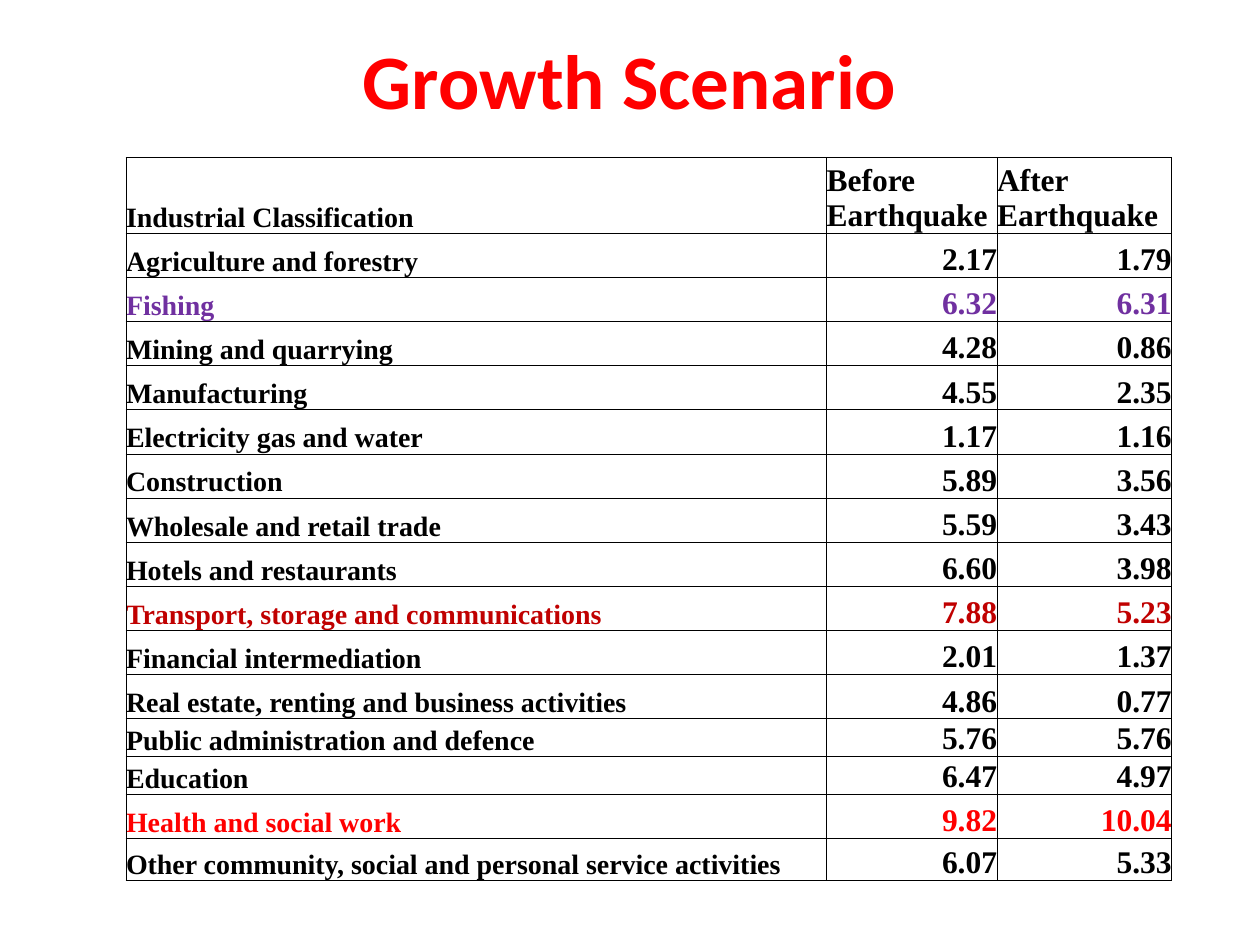
import pptx
import pptx.util
import pptx.dml.color
import pptx.enum.text
import pptx.oxml.ns
import lxml.etree

ALIGN = pptx.enum.text.PP_ALIGN
ANCHOR = pptx.enum.text.MSO_ANCHOR
WIDE, HIGH = 10, 7.5
BLACK, RED, DARK, PLUM = "000000", "FF0000", "C00000", "7030A0"
COLS = [0.67, 0.163, 0.167]
TALL, MID, LOW, LAST, HEAD = 0.35, 0.35, 0.29, 0.33, 0.58
ROWS = [
    ("Industrial Classification", "Before Earthquake", "After Earthquake"),
    ("Agriculture and forestry", "2.17", "1.79"),
    ("Fishing", "6.32", "6.31"),
    ("Mining and quarrying", "4.28", "0.86"),
    ("Manufacturing", "4.55", "2.35"),
    ("Electricity gas and water", "1.17", "1.16"),
    ("Construction", "5.89", "3.56"),
    ("Wholesale and retail trade", "5.59", "3.43"),
    ("Hotels and restaurants", "6.60", "3.98"),
    ("Transport, storage and communications", "7.88", "5.23"),
    ("Financial intermediation", "2.01", "1.37"),
    ("Real estate, renting and business activities", "4.86", "0.77"),
    ("Public administration and defence", "5.76", "5.76"),
    ("Education", "6.47", "4.97"),
    ("Health and social work", "9.82", "10.04"),
    ("Other community, social and personal service activities", "6.07", "5.33"),
]
TINTS = {"Fishing": PLUM, "Transport, storage and communications": DARK,
         "Health and social work": RED}
SIZES = [HEAD] + [TALL] * 11 + [LOW] * 2 + [MID, LAST]


def paint(text):
    """Turn a hex string into a colour."""
    return pptx.dml.color.RGBColor.from_string(text)


def scale(box):
    """Turn shares of the slide into lengths."""
    return [pptx.util.Inches(part * full) for part, full in zip(box, (WIDE, HIGH) * 2)]


def style(frame, text, face, size, tint, align):
    """Write bold text into a frame."""
    frame.text = text
    para = frame.paragraphs[0]
    para.alignment = align
    font = para.runs[0].font
    font.name, font.size, font.bold = face, pptx.util.Pt(size), True
    font.color.rgb = paint(tint)


def edge(cell, tint, width):
    """Draw the four borders of a cell."""
    props = cell._tc.get_or_add_tcPr()
    name = pptx.oxml.ns.qn
    for spot, side in enumerate(("a:lnL", "a:lnR", "a:lnT", "a:lnB")):
        line = lxml.etree.Element(name(side), w=str(pptx.util.Pt(width)))
        fill = lxml.etree.SubElement(line, name("a:solidFill"))
        lxml.etree.SubElement(fill, name("a:srgbClr"), val=tint)
        props.insert(spot, line)


def title(slide, box):
    """Place the heading in its box."""
    frame = slide.shapes.add_textbox(*scale(box)).text_frame
    frame.word_wrap = True
    frame.vertical_anchor = ANCHOR.MIDDLE
    style(frame, "Growth Scenario", "Calibri", 44, RED, ALIGN.CENTER)


def grid(slide, box):
    """Place the table of growth rates in its box."""
    left, top, width, height = scale(box)
    table = slide.shapes.add_table(len(ROWS), len(COLS), left, top, width, height).table
    table.first_row = table.horz_banding = False
    for col, share in zip(table.columns, COLS):
        col.width = int(width * share)
    for row, size in zip(table.rows, SIZES):
        row.height = int(height * size / sum(SIZES))
    for r, row in enumerate(ROWS):
        for c, text in enumerate(row):
            cell = table.cell(r, c)
            cell.margin_left = cell.margin_right = 0
            cell.margin_top = cell.margin_bottom = 0
            cell.vertical_anchor = ANCHOR.BOTTOM
            cell.fill.background()
            edge(cell, BLACK, 0.5)
            style(cell.text_frame, text, "Times New Roman", 18 if c else 16,
                  TINTS.get(row[0], BLACK), ALIGN.RIGHT if r and c else ALIGN.LEFT)


def main():
    """Build the slide and save it."""
    deck = pptx.Presentation()
    deck.slide_width = pptx.util.Inches(WIDE)
    deck.slide_height = pptx.util.Inches(HIGH)
    slide = deck.slides.add_slide(deck.slide_layouts[6])
    title(slide, (0.05, 1 / 30, 0.9, 0.1))
    grid(slide, (0.1, 1 / 6, 0.83, 0.76))
    deck.save("out.pptx")


if __name__ == "__main__":
    main()
